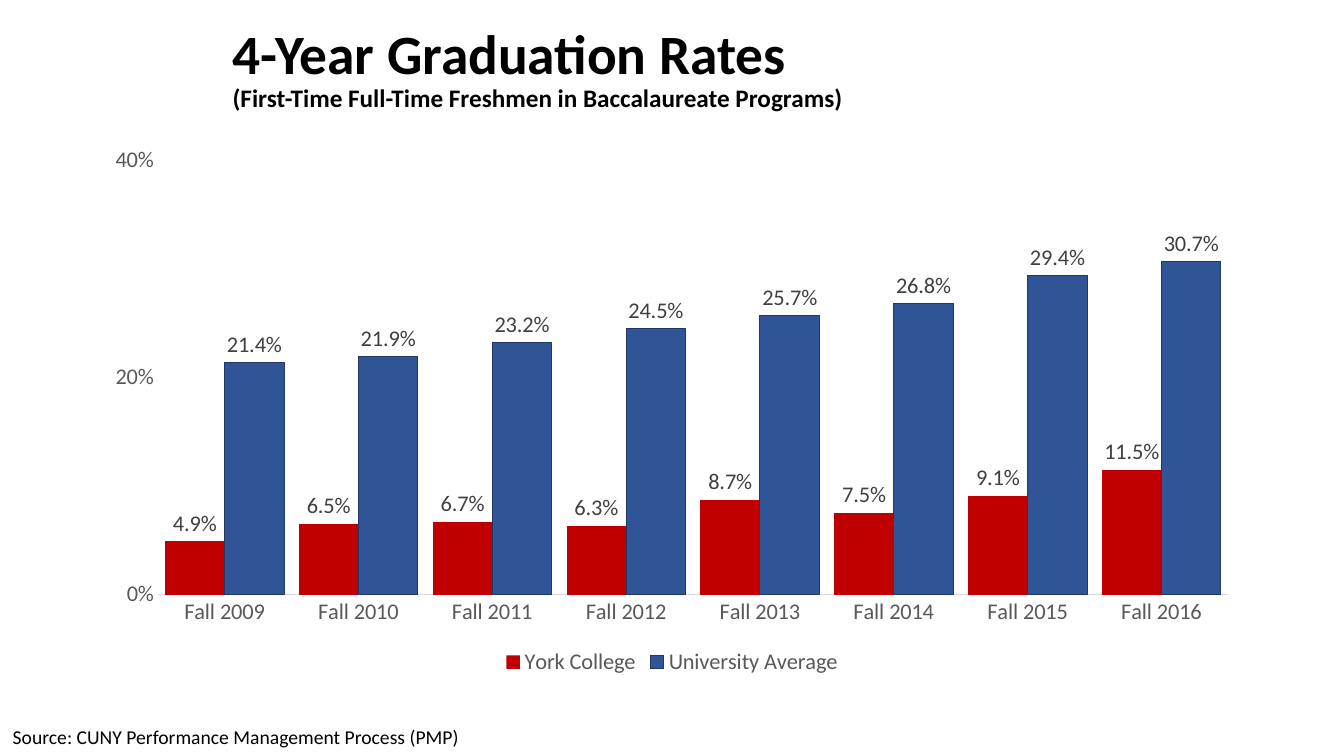
from pptx import Presentation
from pptx.chart.data import CategoryChartData
from pptx.dml.color import RGBColor
from pptx.enum.chart import XL_CHART_TYPE, XL_LABEL_POSITION, XL_LEGEND_POSITION, XL_TICK_MARK
from pptx.enum.text import MSO_ANCHOR, MSO_AUTO_SIZE, PP_ALIGN
from pptx.util import Pt

COLUMNS = XL_CHART_TYPE.COLUMN_CLUSTERED
ABOVE_BAR = XL_LABEL_POSITION.OUTSIDE_END
LEGEND_BELOW = XL_LEGEND_POSITION.BOTTOM
NO_TICKS = XL_TICK_MARK.NONE
MIDDLE = MSO_ANCHOR.MIDDLE
NO_FIT = MSO_AUTO_SIZE.NONE
GROW = MSO_AUTO_SIZE.SHAPE_TO_FIT_TEXT
LEFT = PP_ALIGN.LEFT

BLACK = RGBColor(0x00, 0x00, 0x00)
AXIS_GREY = RGBColor(0x59, 0x59, 0x59)
LABEL_GREY = RGBColor(0x40, 0x40, 0x40)
BASELINE_GREY = RGBColor(0xD9, 0xD9, 0xD9)
YORK_RED = RGBColor(0xC0, 0x00, 0x00)
UNIVERSITY_BLUE = RGBColor(0x2F, 0x55, 0x97)
UNIVERSITY_EDGE = RGBColor(0x20, 0x38, 0x64)

FONT = "Calibri"
COHORTS = [f"Fall {year}" for year in range(2009, 2017)]
RATES = [
    ("York College", (0.049, 0.065, 0.067, 0.063, 0.087, 0.075, 0.091, 0.115),
     YORK_RED, None),
    ("University Average", (0.214, 0.219, 0.232, 0.245, 0.257, 0.268, 0.294, 0.307),
     UNIVERSITY_BLUE, UNIVERSITY_EDGE),
]


def set_font(font, size, color=BLACK, bold=False):
    """Apply the slide's typeface with a size, colour and weight."""
    font.name, font.size, font.bold = FONT, Pt(size), bold
    font.color.rgb = color


def add_text(paragraph, text, **style):
    """Append a formatted run to a paragraph."""
    run = paragraph.add_run()
    run.text = text
    set_font(run.font, **style)


def add_heading(slide, left, top, width, height):
    """Fill the title placeholder with the heading and its subheading."""
    heading = slide.shapes.title
    heading.left, heading.top = Pt(left), Pt(top)
    heading.width, heading.height = Pt(width), Pt(height)
    frame = heading.text_frame
    frame.auto_size, frame.vertical_anchor = NO_FIT, MIDDLE
    frame.word_wrap = True
    paragraph = frame.paragraphs[0]
    paragraph.alignment, paragraph.line_spacing = LEFT, 0.9
    add_text(paragraph, "4-Year Graduation Rates", size=39.6, bold=True)
    paragraph.add_line_break()
    add_text(paragraph, "(First-Time Full-Time Freshmen in Baccalaureate Programs)",
             size=18, bold=True)


def add_source(slide, left, top, width, height):
    """Place the data source note."""
    note = slide.shapes.add_textbox(Pt(left), Pt(top), Pt(width), Pt(height))
    frame = note.text_frame
    frame.word_wrap, frame.auto_size = False, GROW
    add_text(frame.paragraphs[0], "Source: CUNY Performance Management Process (PMP)",
             size=14)


def format_axes(chart):
    """Style the cohort axis and the percentage axis."""
    cohort_axis, rate_axis = chart.category_axis, chart.value_axis
    for axis in (cohort_axis, rate_axis):
        axis.major_tick_mark = axis.minor_tick_mark = NO_TICKS
        axis.has_major_gridlines = False
        set_font(axis.tick_labels.font, 16, AXIS_GREY)
    cohort_axis.format.line.color.rgb = BASELINE_GREY
    cohort_axis.format.line.width = Pt(0.75)
    rate_axis.format.line.fill.background()
    rate_axis.minimum_scale, rate_axis.maximum_scale = 0, 0.4
    rate_axis.major_unit = 0.2
    rate_axis.tick_labels.number_format = "0%"
    rate_axis.tick_labels.number_format_is_linked = False


def format_bars(bars, color, edge):
    """Colour one series and label its bars."""
    bars.invert_if_negative = False
    bars.format.fill.solid()
    bars.format.fill.fore_color.rgb = color
    if edge is None:
        bars.format.line.fill.background()
    else:
        bars.format.line.color.rgb = edge
        bars.format.line.width = Pt(0.75)
    labels = bars.data_labels
    labels.show_value, labels.position = True, ABOVE_BAR
    labels.number_format, labels.number_format_is_linked = "0.0%", False
    set_font(labels.font, 16, LABEL_GREY)


def add_rates_chart(slide, left, top, width, height):
    """Draw the graduation rates by cohort as paired columns."""
    rates = CategoryChartData(number_format="0.0%")
    rates.categories = COHORTS
    for name, values, _, _ in RATES:
        rates.add_series(name, values)
    chart = slide.shapes.add_chart(
        COLUMNS, Pt(left), Pt(top), Pt(width), Pt(height), rates).chart
    chart.has_title = False
    set_font(chart.font, 16)
    chart.has_legend = True
    chart.legend.position = LEGEND_BELOW
    chart.legend.include_in_layout = False
    set_font(chart.legend.font, 16, AXIS_GREY)
    format_axes(chart)
    plot = chart.plots[0]
    plot.gap_width, plot.overlap, plot.vary_by_categories = 25, 0, False
    for bars, (_, _, color, edge) in zip(plot.series, RATES):
        format_bars(bars, color, edge)


def main():
    """Build and save the slide."""
    deck = Presentation()
    deck.slide_width, deck.slide_height = Pt(960), Pt(540)
    slide = deck.slides.add_slide(deck.slide_layouts.get_by_name("Title Only"))
    add_heading(slide, 159, 21, 739, 57.5)
    add_source(slide, 2, 514, 336, 24.5)
    add_rates_chart(slide, 66, 97, 828, 389)
    deck.save("out.pptx")


if __name__ == "__main__":
    main()
